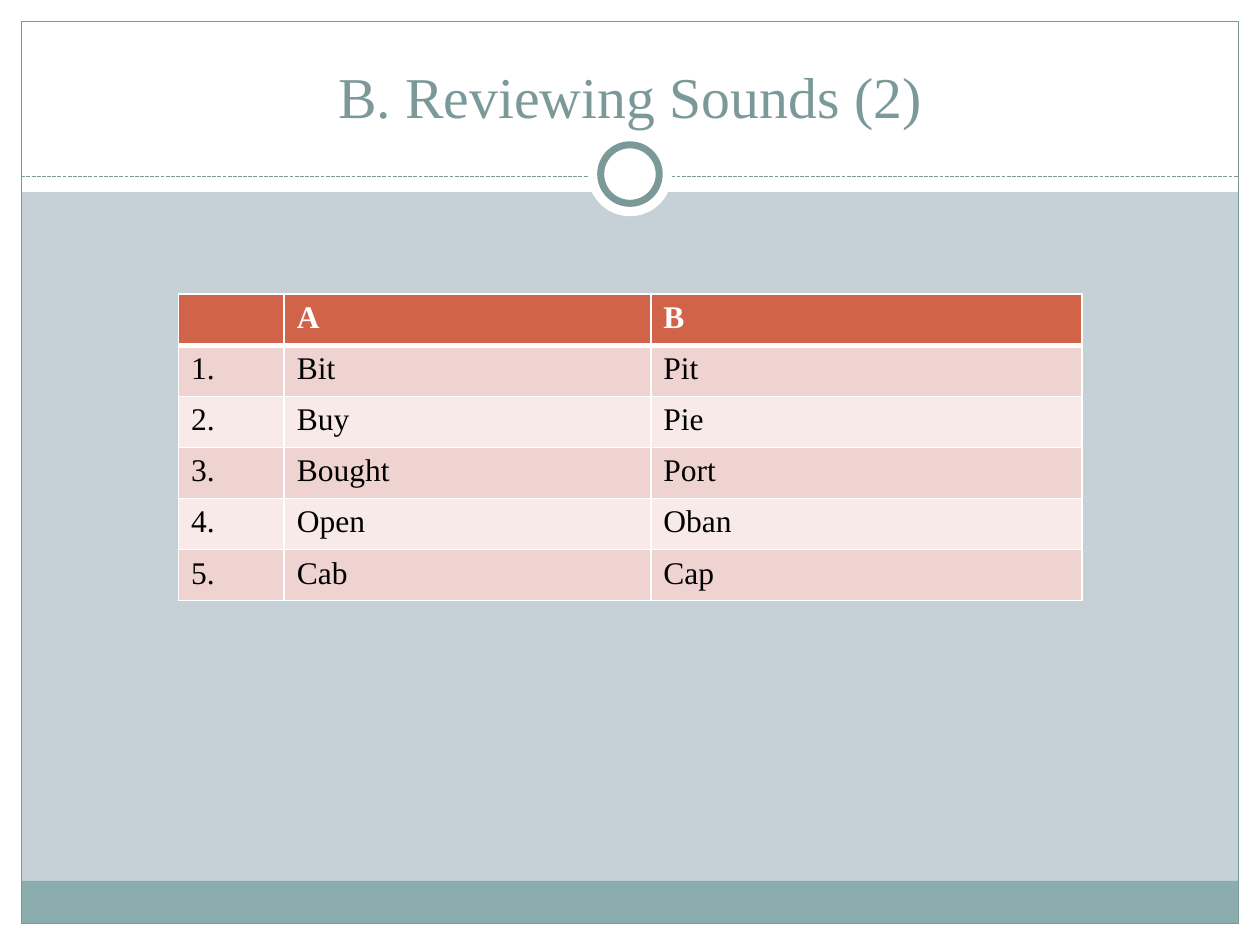
from lxml import etree
from pptx import Presentation
from pptx.dml.color import RGBColor
from pptx.enum.dml import MSO_LINE
from pptx.enum.shapes import MSO_CONNECTOR, MSO_SHAPE
from pptx.enum.text import MSO_ANCHOR, PP_ALIGN
from pptx.oxml.ns import qn
from pptx.util import Cm, Pt

RECT, OVAL = MSO_SHAPE.RECTANGLE, MSO_SHAPE.OVAL
STRAIGHT, DASH = MSO_CONNECTOR.STRAIGHT, MSO_LINE.SQUARE_DOT
CENTER, BOTTOM = PP_ALIGN.CENTER, MSO_ANCHOR.BOTTOM

FONT = "Times New Roman"
WHITE, BLACK, TEAL = "FFFFFF", "000000", "7C999A"
BACKGROUND, FOOTER, HEADER = "C5D1D7", "8CADAE", "D16349"
BANDS = ["EED3D0", "F7EAE9"]

TITLE = "B. Reviewing Sounds (2)"
ROWS = [
    ("", "A", "B"),
    ("1.", "Bit", "Pit"),
    ("2.", "Buy", "Pie"),
    ("3.", "Bought", "Port"),
    ("4.", "Open", "Oban"),
    ("5.", "Cab", "Cap"),
]
COLUMN_WIDTHS = [2.13, 7.39, 8.69]
ROW_HEIGHT = 1.03

WIDTH, HEIGHT, MARGIN = 25.4, 19.05, 0.43
INNER_W, INNER_H = WIDTH - 2 * MARGIN, HEIGHT - 2 * MARGIN
RULE_Y, RING_Y = 3.56, 3.51
DISC, RING = 1.7, 1.18

SHAPES = [
    (RECT, 0, HEIGHT - MARGIN, WIDTH, MARGIN, WHITE, None),
    (RECT, 0, 0, WIDTH, 3.87, WHITE, None),
    (RECT, 0, 0, MARGIN, HEIGHT, WHITE, None),
    (RECT, WIDTH - MARGIN, 0, MARGIN, HEIGHT, WHITE, None),
    (RECT, MARGIN, 17.76, INNER_W, 0.86, FOOTER, None),
    (RECT, MARGIN, MARGIN, INNER_W, INNER_H, None, 0.75),
]
CIRCLES = [
    (OVAL, (WIDTH - d) / 2, RING_Y - d / 2, d, d, WHITE, line)
    for d, line in [(DISC, None), (RING, 4)]
]


def rgb(color):
    return RGBColor.from_string(color)


def add_shape(slide, kind, x, y, w, h, fill, line):
    sp = slide.shapes.add_shape(kind, Cm(x), Cm(y), Cm(w), Cm(h))
    sp.shadow.inherit = False
    if fill:
        sp.fill.solid()
        sp.fill.fore_color.rgb = rgb(fill)
    else:
        sp.fill.background()
    if line:
        sp.line.color.rgb = rgb(TEAL)
        sp.line.width = Pt(line)
    else:
        sp.line.fill.background()


def add_rule(slide):
    line = slide.shapes.add_connector(
        STRAIGHT, Cm(MARGIN), Cm(RULE_Y), Cm(WIDTH - MARGIN), Cm(RULE_Y))
    line.line.color.rgb = rgb(TEAL)
    line.line.width = Pt(0.75)
    line.line.dash_style = DASH
    etree.SubElement(line._element.spPr, qn("a:effectLst"))


def style_text(p, size, color, bold=False):
    p.font.name = FONT
    p.font.size = Pt(size)
    p.font.bold = bold
    p.font.color.rgb = rgb(color)


def add_title(slide):
    tf = slide.shapes.add_textbox(Cm(0.85), Cm(0.64), Cm(23.7), Cm(2.11)).text_frame
    tf.word_wrap = True
    tf.vertical_anchor = BOTTOM
    p = tf.paragraphs[0]
    p.text = TITLE
    p.alignment = CENTER
    style_text(p, 33, TEAL)


def set_borders(cell, top, bottom):
    tc_pr = cell._tc.get_or_add_tcPr()
    widths = {"a:lnL": 1, "a:lnR": 1, "a:lnT": top, "a:lnB": bottom}
    for i, (tag, width) in enumerate(widths.items()):
        ln = etree.Element(qn(tag), w=str(Pt(width)))
        fill = etree.SubElement(ln, qn("a:solidFill"))
        etree.SubElement(fill, qn("a:srgbClr"), val=WHITE)
        tc_pr.insert(i, ln)


def add_sound_table(slide):
    table = slide.shapes.add_table(
        len(ROWS), len(COLUMN_WIDTHS), Cm(3.6), Cm(5.93),
        Cm(sum(COLUMN_WIDTHS)), Cm(ROW_HEIGHT * len(ROWS))).table
    for column, width in zip(table.columns, COLUMN_WIDTHS):
        column.width = Cm(width)
    for i, row in enumerate(ROWS):
        table.rows[i].height = Cm(ROW_HEIGHT)
        head = i == 0
        for j, text in enumerate(row):
            cell = table.cell(i, j)
            cell.text = text
            cell.fill.solid()
            cell.fill.fore_color.rgb = rgb(HEADER if head else BANDS[(i - 1) % 2])
            set_borders(cell, 3 if i == 1 else 1, 3 if head else 1)
            style_text(cell.text_frame.paragraphs[0], 18, WHITE if head else BLACK, head)


def main():
    prs = Presentation()
    prs.slide_width, prs.slide_height = Cm(WIDTH), Cm(HEIGHT)
    slide = prs.slides.add_slide(prs.slide_layouts[6])
    slide.background.fill.solid()
    slide.background.fill.fore_color.rgb = rgb(BACKGROUND)
    for shape in SHAPES:
        add_shape(slide, *shape)
    add_rule(slide)
    for circle in CIRCLES:
        add_shape(slide, *circle)
    add_title(slide)
    add_sound_table(slide)
    prs.save("out.pptx")


if __name__ == "__main__":
    main()
